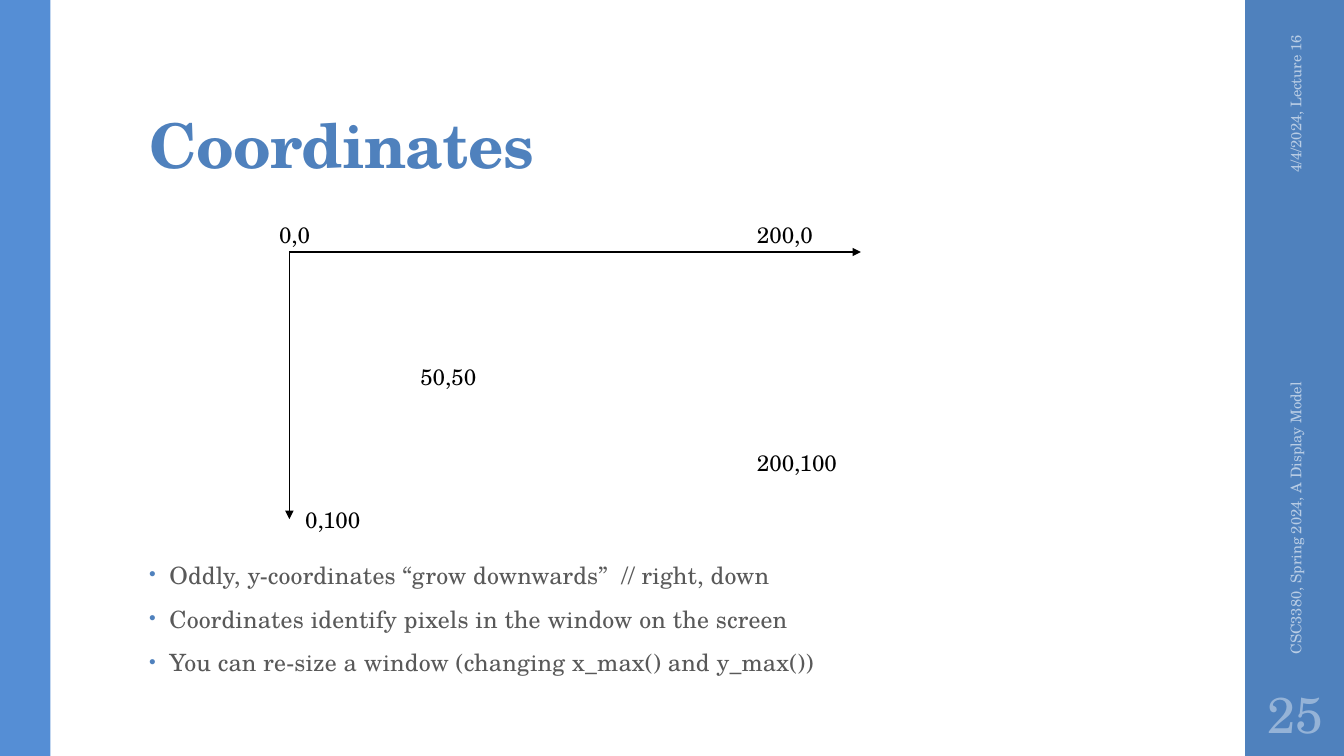
"""Build the Coordinates slide: a pixel axis diagram above three remarks."""
from typing import NamedTuple

from lxml.etree import SubElement
from pptx import Presentation
from pptx.dml.color import RGBColor
from pptx.enum.shapes import MSO_CONNECTOR, MSO_SHAPE
from pptx.enum.text import MSO_ANCHOR, PP_ALIGN
from pptx.oxml.ns import qn
from pptx.slide import Slide
from pptx.text.text import _Paragraph
from pptx.util import Cm, Pt

FONT = "TeX Gyre Schola"
COLOURS = {
    "accent": "4F81BD",
    "edge": "558ED5",
    "remark": "595959",
    "footer": "B9CDE5",
    "number": "95B3D7",
    "ink": "000000",
}
WIDTH, HEIGHT = 33.86, 19.05
ORIGIN_X, ORIGIN_Y = 7.29, 6.35


class Band(NamedTuple):
    left: float
    width: float
    colour: str


class Axis(NamedTuple):
    end_x: float
    end_y: float


class Label(NamedTuple):
    lines: list[str]
    left: float
    top: float
    width: float
    height: float
    size: float
    colour: str
    anchor: MSO_ANCHOR = MSO_ANCHOR.TOP
    align: PP_ALIGN = PP_ALIGN.LEFT
    rotation: int = 0
    bold: bool = False
    line_spacing: float = 1.0
    tracking: int = 0
    bulleted: bool = False
    side_inset: float = 0.25


def coordinate(text: str, left: float, top: float, width: float) -> Label:
    return Label([text], left, top, width, 0.94, 16, "ink")


BANDS = [Band(31.37, 2.54, "accent"), Band(0, 1.27, "edge")]
AXES = [Axis(21.69, ORIGIN_Y), Axis(ORIGIN_X, 13.08)]
LABELS = [
    Label(["Coordinates"], 3.51, 0.81, 26.92, 3.89, 44, "accent",
          anchor=MSO_ANCHOR.BOTTOM, bold=True, line_spacing=0.9, tracking=-50),
    Label(["Oddly, y-coordinates “grow downwards”  // right, down",
           "Coordinates identify pixels in the window on the screen",
           "You can re-size a window (changing x_max() and y_max())"],
          3.51, 5.08, 23.88, 12.09, 17, "remark",
          anchor=MSO_ANCHOR.BOTTOM, line_spacing=0.75, tracking=10, bulleted=True),
    Label(["4/4/2024, Lecture 16"], 30, 2.77, 5.28, 1.02, 10.5, "footer",
          anchor=MSO_ANCHOR.MIDDLE, align=PP_ALIGN.RIGHT, rotation=270),
    Label(["CSC3380, Spring 2024, A Display Model"], 27.66, 11.25, 9.96, 1.02, 10.5,
          "footer", anchor=MSO_ANCHOR.MIDDLE, rotation=270),
    Label(["25"], 31.37, 17.15, 2.54, 1.65, 36, "number",
          anchor=MSO_ANCHOR.MIDDLE, align=PP_ALIGN.CENTER, side_inset=0.13),
    coordinate("0,0", 6.78, 5.44, 1.35),
    coordinate("0,100", 7.44, 12.62, 2.03),
    coordinate("200,0", 18.82, 5.44, 2.54),
    coordinate("50,50", 10.34, 9.02, 2.21),
    coordinate("200,100", 18.82, 11.2, 3.05),
]


def colour_of(name: str) -> RGBColor:
    return RGBColor.from_string(COLOURS[name])


def draw_band(page: Slide, band: Band) -> None:
    box = page.shapes.add_shape(MSO_SHAPE.RECTANGLE, Cm(band.left), Cm(0),
                                Cm(band.width), Cm(HEIGHT))
    box.shadow.inherit = False
    box.fill.solid()
    box.fill.fore_color.rgb = colour_of(band.colour)
    box.line.fill.background()


def draw_axis(page: Slide, axis: Axis) -> None:
    arrow = page.shapes.add_connector(MSO_CONNECTOR.STRAIGHT, Cm(ORIGIN_X), Cm(ORIGIN_Y),
                                      Cm(axis.end_x), Cm(axis.end_y))
    arrow.line.color.rgb = colour_of("ink")
    arrow.line.width = Pt(0.75)
    properties = arrow._element.spPr
    SubElement(properties.find(qn("a:ln")), qn("a:tailEnd"), type="triangle")
    SubElement(properties, qn("a:effectLst"))


def add_bullet(para: _Paragraph) -> None:
    para.space_before, para.space_after = Pt(14), Pt(2)
    properties = para._p.get_or_add_pPr()
    properties.set("marL", str(Cm(0.51)))
    properties.set("indent", str(-Cm(0.51)))
    bullet_colour = SubElement(properties, qn("a:buClr"))
    SubElement(bullet_colour, qn("a:srgbClr"), val=COLOURS["accent"])
    SubElement(properties, qn("a:buSzPct"), val="80000")
    SubElement(properties, qn("a:buFont"), typeface="Arial")
    SubElement(properties, qn("a:buChar"), char="•")


def draw_label(page: Slide, label: Label) -> None:
    box = page.shapes.add_textbox(Cm(label.left), Cm(label.top),
                                  Cm(label.width), Cm(label.height))
    box.rotation = label.rotation
    frame = box.text_frame
    frame.word_wrap = True
    frame.vertical_anchor = label.anchor
    frame.margin_left = frame.margin_right = Cm(label.side_inset)
    frame.margin_top = frame.margin_bottom = Cm(0.13)
    frame.text = "\n".join(label.lines)
    for para in frame.paragraphs:
        para.alignment = label.align
        para.line_spacing = label.line_spacing
        if label.bulleted:
            add_bullet(para)
        for span in para.runs:
            span.font.name = FONT
            span.font.size = Pt(label.size)
            span.font.bold = label.bold
            span.font.color.rgb = colour_of(label.colour)
            span._r.get_or_add_rPr().set("spc", str(label.tracking))


def main() -> None:
    deck = Presentation()
    deck.slide_width, deck.slide_height = Cm(WIDTH), Cm(HEIGHT)
    page = deck.slides.add_slide(deck.slide_layouts[6])
    for band in BANDS:
        draw_band(page, band)
    for axis in AXES:
        draw_axis(page, axis)
    for label in LABELS:
        draw_label(page, label)
    deck.save("out.pptx")


if __name__ == "__main__":
    main()
